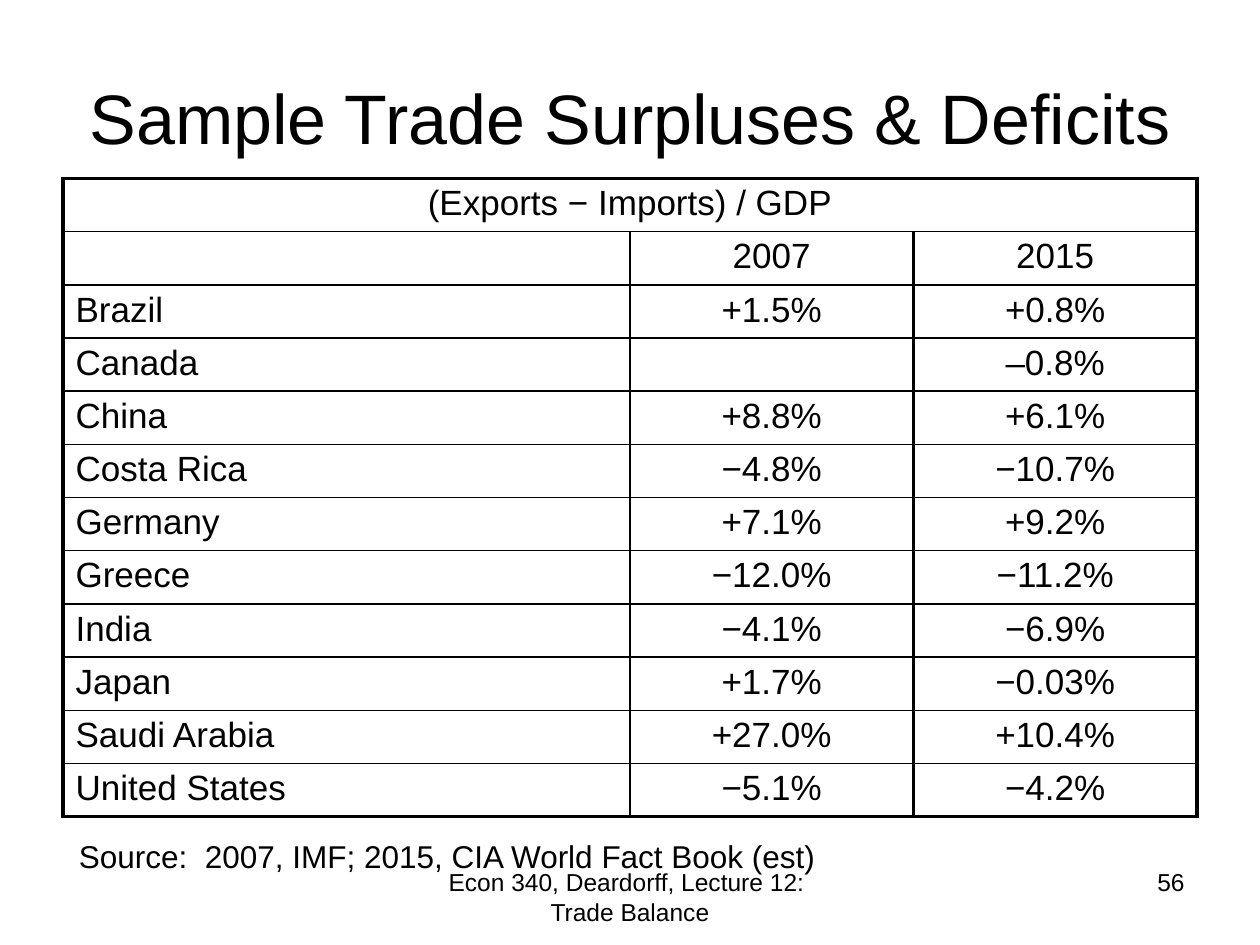
"""Build a slide with a table of trade balances as a share of GDP."""

import pptx
import pptx.dml.color
import pptx.enum.text
import pptx.oxml.ns
import pptx.util
from lxml import etree

Pt = pptx.util.Pt
ALIGN = pptx.enum.text.PP_ALIGN
ANCHOR = pptx.enum.text.MSO_ANCHOR
COLORS = {"text": "000000", "border": "000000", "background": "FFFFFF"}
FONT = "Arial"
THICK, THIN = 2.25, 1
ROW_HEIGHT = 29.5
COLUMN_WIDTHS = [324, 162, 162]
ROWS = [
    ["(Exports − Imports) / GDP", "", ""],
    ["", "2007", "2015"],
    ["Brazil", "+1.5%", "+0.8%"],
    ["Canada", "", "–0.8%"],
    ["China", "+8.8%", "+6.1%"],
    ["Costa Rica", "−4.8%", "−10.7%"],
    ["Germany", "+7.1%", "+9.2%"],
    ["Greece", "−12.0%", "−11.2%"],
    ["India", "−4.1%", "−6.9%"],
    ["Japan", "+1.7%", "−0.03%"],
    ["Saudi Arabia", "+27.0%", "+10.4%"],
    ["United States", "−5.1%", "−4.2%"],
]


def color(name):
    return pptx.dml.color.RGBColor.from_string(COLORS[name])


def write(paragraph, text, size, alignment):
    paragraph.alignment = alignment
    run = paragraph.add_run()
    run.text = text
    run.font.size = Pt(size)
    run.font.name = FONT
    run.font.color.rgb = color("text")


def add_text(slide, box, text, size, alignment=ALIGN.LEFT, anchor=ANCHOR.TOP):
    shape = slide.shapes.add_textbox(*[Pt(length) for length in box])
    frame = shape.text_frame
    frame.word_wrap = True
    frame.vertical_anchor = anchor
    write(frame.paragraphs[0], text, size, alignment)


def set_borders(cell, widths):
    properties = cell._tc.get_or_add_tcPr()
    for side, width in zip("LRTB", widths):
        line = etree.SubElement(properties, pptx.oxml.ns.qn(f"a:ln{side}"), w=str(Pt(width)))
        fill = etree.SubElement(line, pptx.oxml.ns.qn("a:solidFill"))
        etree.SubElement(fill, pptx.oxml.ns.qn("a:srgbClr"), val=COLORS["border"])


def add_balance_table(slide, left, top):
    frame = slide.shapes.add_table(
        len(ROWS), len(COLUMN_WIDTHS), Pt(left), Pt(top),
        Pt(sum(COLUMN_WIDTHS)), Pt(ROW_HEIGHT * len(ROWS)))
    table = frame.table
    table.first_row = table.horz_banding = False
    for column, width in zip(table.columns, COLUMN_WIDTHS):
        column.width = Pt(width)
    table.cell(0, 0).merge(table.cell(0, len(COLUMN_WIDTHS) - 1))
    horizontal = [THICK] + [THIN] * (len(ROWS) - 1) + [THICK]
    for i, values in enumerate(ROWS):
        table.rows[i].height = Pt(ROW_HEIGHT)
        vertical = [THICK, THIN if i else THICK, THICK, THICK]
        for j, value in enumerate(values):
            cell = table.cell(i, j)
            cell.margin_top = cell.margin_bottom = Pt(3.2)
            set_borders(cell, vertical[j:j + 2] + horizontal[i:i + 2])
            cell.fill.background()
            if value:
                alignment = ALIGN.LEFT if i and j == 0 else ALIGN.CENTER
                write(cell.text_frame.paragraphs[0], value, 20, alignment)


def main():
    presentation = pptx.Presentation()
    presentation.slide_width, presentation.slide_height = Pt(720), Pt(540)
    slide = presentation.slides.add_slide(presentation.slide_layouts[6])
    slide.background.fill.solid()
    slide.background.fill.fore_color.rgb = color("background")
    add_text(slide, (246, 492, 228, 37.5), "Econ 340, Deardorff, Lecture 12:  Trade Balance",
             14, ALIGN.CENTER)
    add_text(slide, (516, 492, 168, 37.5), "56", 14, ALIGN.RIGHT)
    add_text(slide, (36, 21.6, 648, 90), "Sample Trade Surpluses & Deficits",
             40, ALIGN.CENTER, ANCHOR.MIDDLE)
    add_balance_table(slide, 36, 102)
    add_text(slide, (38, 475, 505, 29), "Source:  2007, IMF; 2015, CIA World Fact Book (est)", 18)
    presentation.save("out.pptx")


if __name__ == "__main__":
    main()
